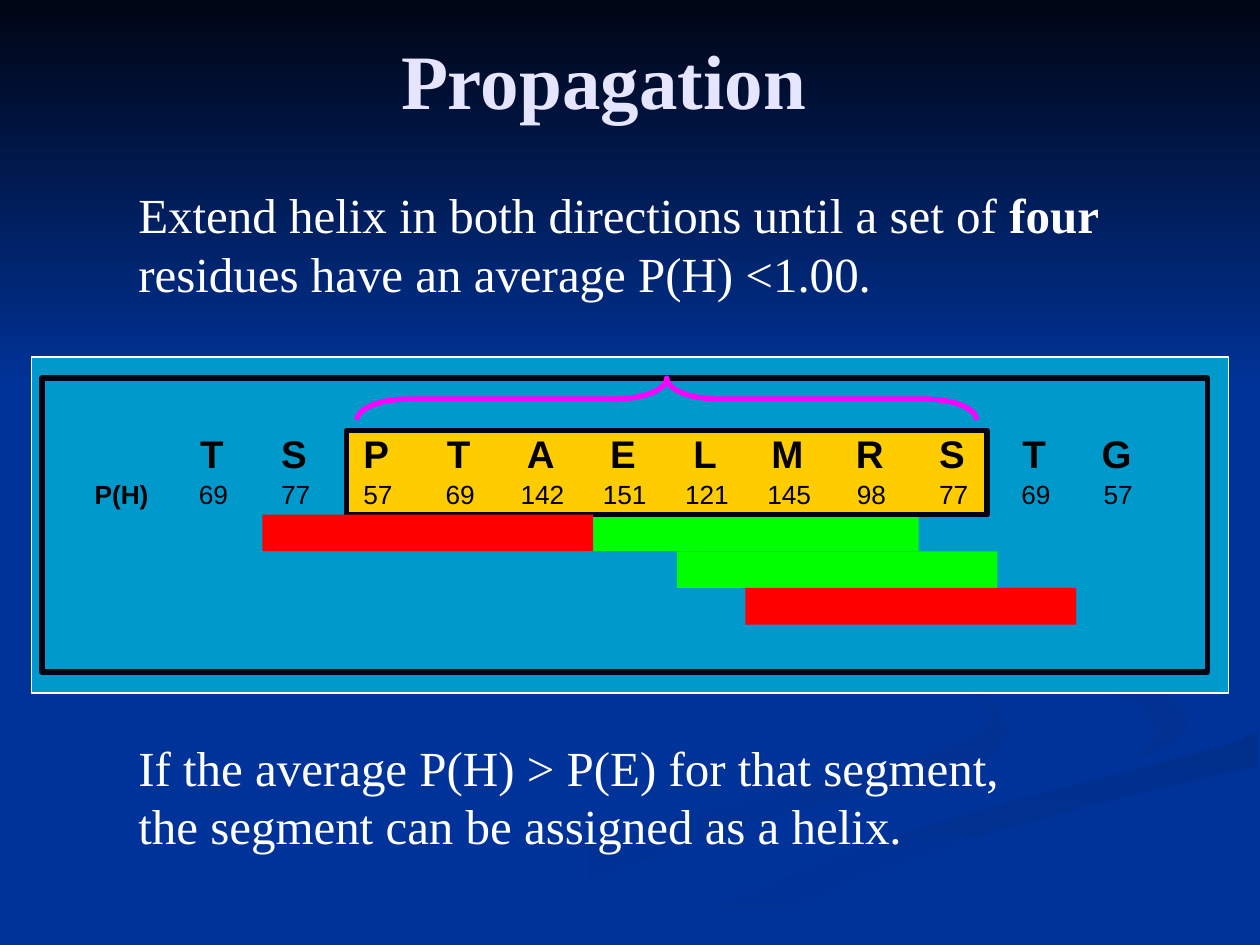
from dataclasses import dataclass

import pptx
import pptx.dml.color
import pptx.enum.shapes
import pptx.enum.text
import pptx.util

Pt = pptx.util.Pt
Shapes = pptx.enum.shapes.MSO_SHAPE
Align = pptx.enum.text.PP_ALIGN
Anchor = pptx.enum.text.MSO_ANCHOR


@dataclass(frozen=True)
class Theme:
    serif: str = "Times New Roman"
    sans: str = "Arial"
    title_size: int = 44
    body_size: int = 28
    residue_size: int = 22
    score_size: int = 15
    background: str = "003399"
    night: str = "000514"
    swoosh: str = "002F8C"
    title: str = "E5E5FF"
    white: str = "FFFFFF"
    black: str = "000000"
    panel: str = "0099CC"
    helix: str = "FFCC00"
    high: str = "00FF00"
    low: str = "FF0000"
    brace: str = "FF00FF"


THEME = Theme()

RESIDUES = "TSPTAELMRSTG"
SCORES = [69, 77, 57, 69, 142, 151, 121, 145, 98, 77, 69, 57]
COLUMN_PITCH = 47
CELL_WIDTH = 44

# Each swoosh: outline in points, first and last gradient colour, angle
SWOOSHES = [
    ([(552, 394), (559, 398), (562, 400), (566, 408), (562, 417), (546, 425),
      (523, 433), (492, 441), (444, 453), (388, 467), (330, 485), (271, 509),
      (243, 523), (216, 539), (260, 539), (310, 514), (359, 495), (406, 479),
      (449, 466), (487, 456), (519, 449), (544, 442), (562, 436), (570, 430),
      (574, 423), (576, 418), (572, 408), (566, 400), (559, 397)],
     THEME.background, "003193", 0),
    ([(679, 410), (673, 401), (662, 394), (639, 385), (598, 374), (557, 362),
      (528, 348), (521, 334), (528, 351), (552, 369), (587, 382), (615, 388),
      (634, 395), (648, 401), (656, 408), (661, 418), (656, 427), (644, 436),
      (660, 430), (671, 424), (678, 418)],
     THEME.background, "003193", 315),
    ([(362, 539), (411, 539), (432, 528), (454, 518), (482, 505), (520, 491),
      (565, 476), (620, 461), (683, 446), (719, 438), (719, 418), (703, 425),
      (674, 433), (624, 446), (574, 459), (550, 466), (501, 482), (454, 499),
      (410, 518), (374, 538)],
     THEME.swoosh, THEME.background, 270),
]


def rgb(value):
    return pptx.dml.color.RGBColor.from_string(value)


def shade(shape, first, last, angle):
    """Give a shape a borderless two-colour gradient."""
    shape.shadow.inherit = False
    shape.line.fill.background()
    shape.fill.gradient()
    shape.fill.gradient_angle = angle
    for stop, color in zip(shape.fill.gradient_stops, (first, last)):
        stop.color.rgb = rgb(color)


def style(span, font, size, color, bold=False):
    span.font.name = font
    span.font.size = Pt(size)
    span.font.color.rgb = rgb(color)
    span.font.bold = bold


def add_shape(page, kind, left, top, width, height, fill=None, line=None, weight=3):
    shape = page.shapes.add_shape(kind, Pt(left), Pt(top), Pt(width), Pt(height))
    shape.shadow.inherit = False
    if fill:
        shape.fill.solid()
        shape.fill.fore_color.rgb = rgb(fill)
    else:
        shape.fill.background()
    if line:
        shape.line.color.rgb = rgb(line)
        shape.line.width = Pt(weight)
    else:
        shape.line.fill.background()
    return shape


def add_backdrop(page):
    page.background.fill.solid()
    page.background.fill.fore_color.rgb = rgb(THEME.background)
    for outline, first, last, angle in SWOOSHES:
        builder = page.shapes.build_freeform(*outline[0], scale=Pt(1))
        builder.add_line_segments(outline[1:], close=True)
        shade(builder.convert_to_shape(), first, last, angle)
    sky = add_shape(page, Shapes.RECTANGLE, 0, 0, 720, 222)
    shade(sky, THEME.night, THEME.background, 270)


def add_title(page, text):
    title = page.shapes.title
    title.element.getparent().append(title.element)  # in front of the backdrop
    title.left, title.top, title.width, title.height = Pt(66), Pt(0), Pt(558), Pt(90)
    title.text_frame.text = text
    title.text_frame.vertical_anchor = Anchor.MIDDLE
    para = title.text_frame.paragraphs[0]
    para.alignment = Align.CENTER
    style(para.runs[0], THEME.serif, THEME.title_size, THEME.title, True)


def add_body(page, top, width, lines, wrap):
    """Add a text block; each line is a list of (text, bold) pieces."""
    box = page.shapes.add_textbox(Pt(72), Pt(top), Pt(width), Pt(74))
    frame = box.text_frame
    frame.word_wrap = wrap
    for index, pieces in enumerate(lines):
        para = frame.add_paragraph() if index else frame.paragraphs[0]
        for text, bold in pieces:
            span = para.add_run()
            span.text = text
            style(span, THEME.serif, THEME.body_size, THEME.white, bold)


def add_cell(page, center, top, height, text, size, bold):
    box = page.shapes.add_textbox(
        Pt(center - CELL_WIDTH / 2), Pt(top), Pt(CELL_WIDTH), Pt(height))
    frame = box.text_frame
    frame.margin_left = frame.margin_right = frame.margin_top = frame.margin_bottom = 0
    frame.word_wrap = False
    frame.text = text
    para = frame.paragraphs[0]
    para.alignment = Align.CENTER
    style(para.runs[0], THEME.sans, size, THEME.black, bold)


def add_sequence(page):
    add_cell(page, 69.5, 273, 18, "P(H)", THEME.score_size, True)
    for column, (residue, score) in enumerate(zip(RESIDUES, SCORES)):
        offset = column * COLUMN_PITCH
        add_cell(page, 121 + offset, 246, 27, residue, THEME.residue_size, True)
        add_cell(page, 122 + offset, 273, 18, str(score), THEME.score_size, False)


def add_bar(page, left, top, width, color):
    add_shape(page, Shapes.RECTANGLE, left, top, width, 21, color)


def add_brace(page):
    brace = add_shape(page, Shapes.LEFT_BRACE, 369, 51, 24, 354, line=THEME.brace)
    brace.rotation = 90
    brace.adjustments[0] = 1.23
    brace.adjustments[1] = 0.5


def main():
    deck = pptx.Presentation()
    deck.slide_width, deck.slide_height = Pt(720), Pt(540)
    page = deck.slides.add_slide(deck.slide_layouts.get_by_name("Title Only"))

    add_backdrop(page)
    add_shape(page, Shapes.RECTANGLE, 18, 204, 684, 192, THEME.panel, THEME.white, 1)
    add_shape(page, Shapes.RECTANGLE, 24, 216, 666, 168, THEME.panel, THEME.night)
    add_title(page, "Propagation")
    add_body(page, 102, 582, [[
        ("Extend helix in both directions until a set of ", False),
        ("four", True),
        (" residues have an average P(H) <1.00.", False)]], True)
    add_bar(page, 336, 294, 189, THEME.high)
    add_bar(page, 387, 315, 183, THEME.high)
    add_body(page, 417.6, 537, [
        [("If the average P(H) > P(E) for that segment,", False)],
        [("the segment can be assigned as a helix.", False)]], False)
    add_shape(page, Shapes.RECTANGLE, 198, 246, 366, 48, THEME.helix, THEME.night)
    add_sequence(page)
    add_bar(page, 150, 294, 189, THEME.low)
    add_bar(page, 426, 336, 189, THEME.low)
    add_brace(page)
    deck.save("out.pptx")


if __name__ == "__main__":
    main()
